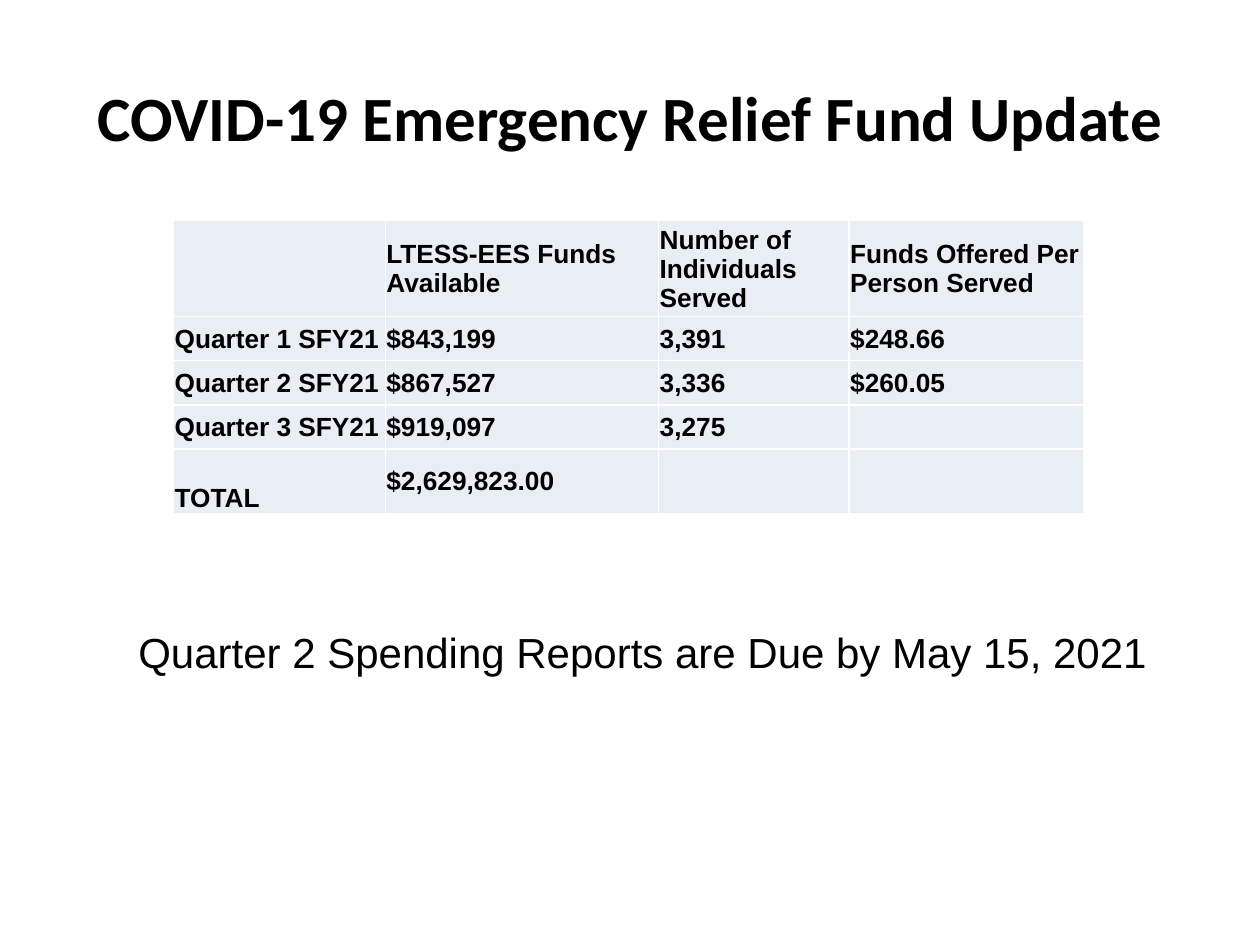
from pptx import Presentation
from pptx.dml.color import RGBColor
from pptx.enum.text import MSO_ANCHOR as Anchor, PP_ALIGN as Align
from pptx.util import Cm, Pt

HEADING = "COVID-19 Emergency Relief Fund Update"
REMINDER = "Quarter 2 Spending Reports are Due by May 15, 2021"
FUNDS = [
    ("", "LTESS-EES Funds Available", "Number of Individuals Served", "Funds Offered Per Person Served"),
    ("Quarter 1 SFY21", "$843,199", "3,391", "$248.66"),
    ("Quarter 2 SFY21", "$867,527", "3,336", "$260.05"),
    ("Quarter 3 SFY21", "$919,097", "3,275", ""),
    ("TOTAL", "$2,629,823.00", "", ""),
]
COLUMN_WIDTHS = [4.27, 5.51, 3.84, 4.72]
ROW_HEIGHTS = [1.93, 0.89, 0.89, 0.89, 1.3]
COLORS = {"text": "000000", "cell": "E9EDF4"}


def style(paragraph, size, name="Arial", bold=False):
    font = paragraph.font
    font.name, font.size, font.bold = name, Pt(size), bold
    font.color.rgb = RGBColor.from_string(COLORS["text"])


def add_heading(slide):
    heading = slide.shapes.title
    heading.left, heading.top, heading.width, heading.height = Cm(1.27), Cm(0.76), Cm(22.86), Cm(3.18)
    heading.text_frame.text = HEADING
    heading.text_frame.vertical_anchor = Anchor.MIDDLE
    paragraph = heading.text_frame.paragraphs[0]
    paragraph.alignment = Align.CENTER
    style(paragraph, 36, "Calibri", True)


def add_funds(slide):
    funds = slide.shapes.add_table(
        len(FUNDS), len(COLUMN_WIDTHS), Cm(3.5), Cm(4.45),
        Cm(sum(COLUMN_WIDTHS)), Cm(sum(ROW_HEIGHTS)),
    ).table
    funds.first_row = funds.horz_banding = False
    for column, width in zip(funds.columns, COLUMN_WIDTHS):
        column.width = Cm(width)
    for row, height, entries in zip(funds.rows, ROW_HEIGHTS, FUNDS):
        row.height = Cm(height)
        for cell, entry in zip(row.cells, entries):
            cell.text = entry
            cell.fill.solid()
            cell.fill.fore_color.rgb = RGBColor.from_string(COLORS["cell"])
            cell.margin_left = cell.margin_right = cell.margin_top = Cm(0.02)
            cell.margin_bottom = 0
            cell.vertical_anchor = Anchor.BOTTOM if entry == "TOTAL" else Anchor.MIDDLE
            style(cell.text_frame.paragraphs[0], 15, bold=True)


def add_reminder(slide):
    reminder = slide.shapes.add_textbox(Cm(2.54), Cm(12.5), Cm(21.59), Cm(1.27)).text_frame
    reminder.word_wrap = True
    reminder.text = REMINDER
    style(reminder.paragraphs[0], 24)


def main():
    deck = Presentation()
    deck.slide_width, deck.slide_height = Cm(25.4), Cm(19.05)
    slide = deck.slides.add_slide(deck.slide_layouts[5])
    add_heading(slide)
    add_funds(slide)
    add_reminder(slide)
    deck.save("out.pptx")


if __name__ == "__main__":
    main()
